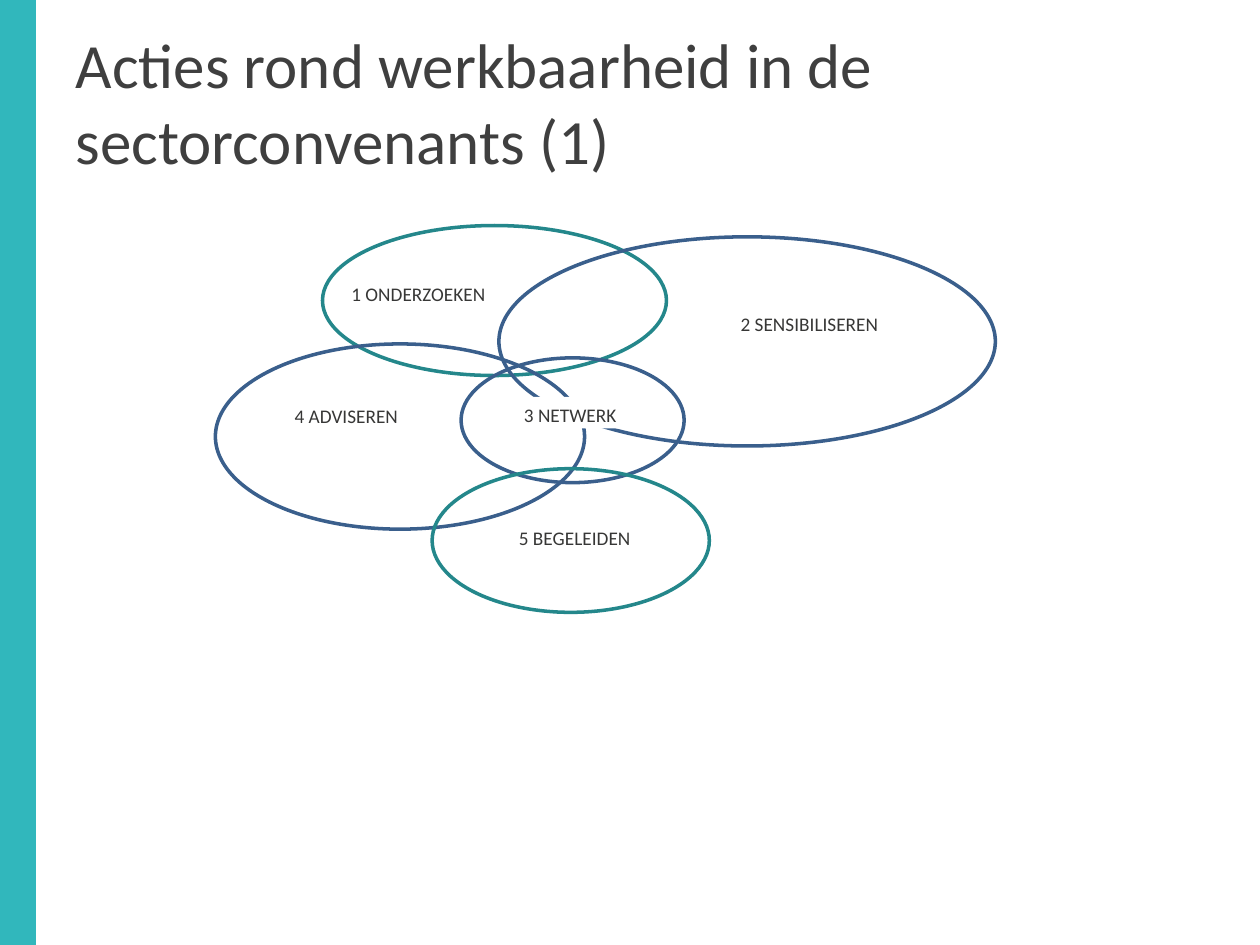
import pptx
import pptx.util
import pptx.dml.color
import pptx.enum.shapes
import pptx.enum.text

Inches = pptx.util.Inches
Pt = pptx.util.Pt
RGBColor = pptx.dml.color.RGBColor
MSO_SHAPE = pptx.enum.shapes.MSO_SHAPE

TURQUOISE = RGBColor(0x31, 0xB7, 0xBC)
TEAL = RGBColor(0x24, 0x87, 0x8B)
BLUE = RGBColor(0x3A, 0x5F, 0x8C)
WHITE = RGBColor(0xFF, 0xFF, 0xFF)
TITLE_GREY = RGBColor(0x3F, 0x3F, 0x3F)
LABEL_GREY = RGBColor(0x37, 0x37, 0x36)

ELLIPSES = [
    (2.56, 1.79, 2.73, 1.19, TEAL),
    (3.96, 1.88, 3.94, 1.66, BLUE),
    (1.71, 2.73, 2.93, 1.47, BLUE),
    (3.66, 2.84, 1.77, 0.99, BLUE),
    (3.43, 3.72, 2.2, 1.14, TEAL),
]

LABELS = [
    (2.69, 2.19, 1.33, 0.28, "1 ONDERZOEKEN"),
    (5.78, 2.43, 1.5, 0.28, "2 SENSIBILISEREN"),
    (4.06, 3.15, 1.01, 0.25, "3 NETWERK"),
    (2.24, 3.16, 1.33, 0.27, "4 ADVISEREN"),
    (4.02, 4.13, 1.27, 0.28, "5 BEGELEIDEN"),
]


class SlideBuilder:
    font = "Calibri"

    def __init__(self, prs):
        self.s = prs.slides.add_slide(prs.slide_layouts[5])

    def add_text(self, tf, text, size, color, anchor):
        tf.word_wrap = True
        tf.auto_size = pptx.enum.text.MSO_AUTO_SIZE.NONE
        tf.vertical_anchor = anchor
        p = tf.paragraphs[0]
        p.alignment = pptx.enum.text.PP_ALIGN.LEFT
        r = p.add_run()
        r.text = text
        r.font.name = self.font
        r.font.size = Pt(size)
        r.font.color.rgb = color

    def title(self, x, y, w, h, text):
        sp = self.s.shapes.title
        sp.left, sp.top, sp.width, sp.height = map(Inches, (x, y, w, h))
        self.add_text(sp.text_frame, text, 36, TITLE_GREY,
                      pptx.enum.text.MSO_ANCHOR.MIDDLE)

    def shape(self, kind, x, y, w, h, line, weight):
        sp = self.s.shapes.add_shape(kind, *map(Inches, (x, y, w, h)))
        sp.shadow.inherit = False
        sp.line.color.rgb = line
        sp.line.width = Pt(weight)
        return sp

    def band(self, x, y, w, h, color):
        sp = self.shape(MSO_SHAPE.RECTANGLE, x, y, w, h, color, 0.75)
        sp.fill.solid()
        sp.fill.fore_color.rgb = color

    def ellipse(self, x, y, w, h, color):
        self.shape(MSO_SHAPE.OVAL, x, y, w, h, color, 2).fill.background()

    def label(self, x, y, w, h, text):
        sp = self.s.shapes.add_textbox(*map(Inches, (x, y, w, h)))
        sp.fill.solid()
        sp.fill.fore_color.rgb = WHITE
        self.add_text(sp.text_frame, text, 11, LABEL_GREY,
                      pptx.enum.text.MSO_ANCHOR.TOP)


def main():
    prs = pptx.Presentation()
    prs.slide_width = Inches(10)
    prs.slide_height = Inches(7.5)
    slide = SlideBuilder(prs)
    slide.band(0, 0, 0.28, 7.5, TURQUOISE)
    slide.title(0.5, 0.3, 9, 1.01,
                "Acties rond werkbaarheid in de sectorconvenants (1)")
    for ellipse in ELLIPSES:
        slide.ellipse(*ellipse)
    for label in LABELS:
        slide.label(*label)
    prs.save("out.pptx")


if __name__ == "__main__":
    main()
